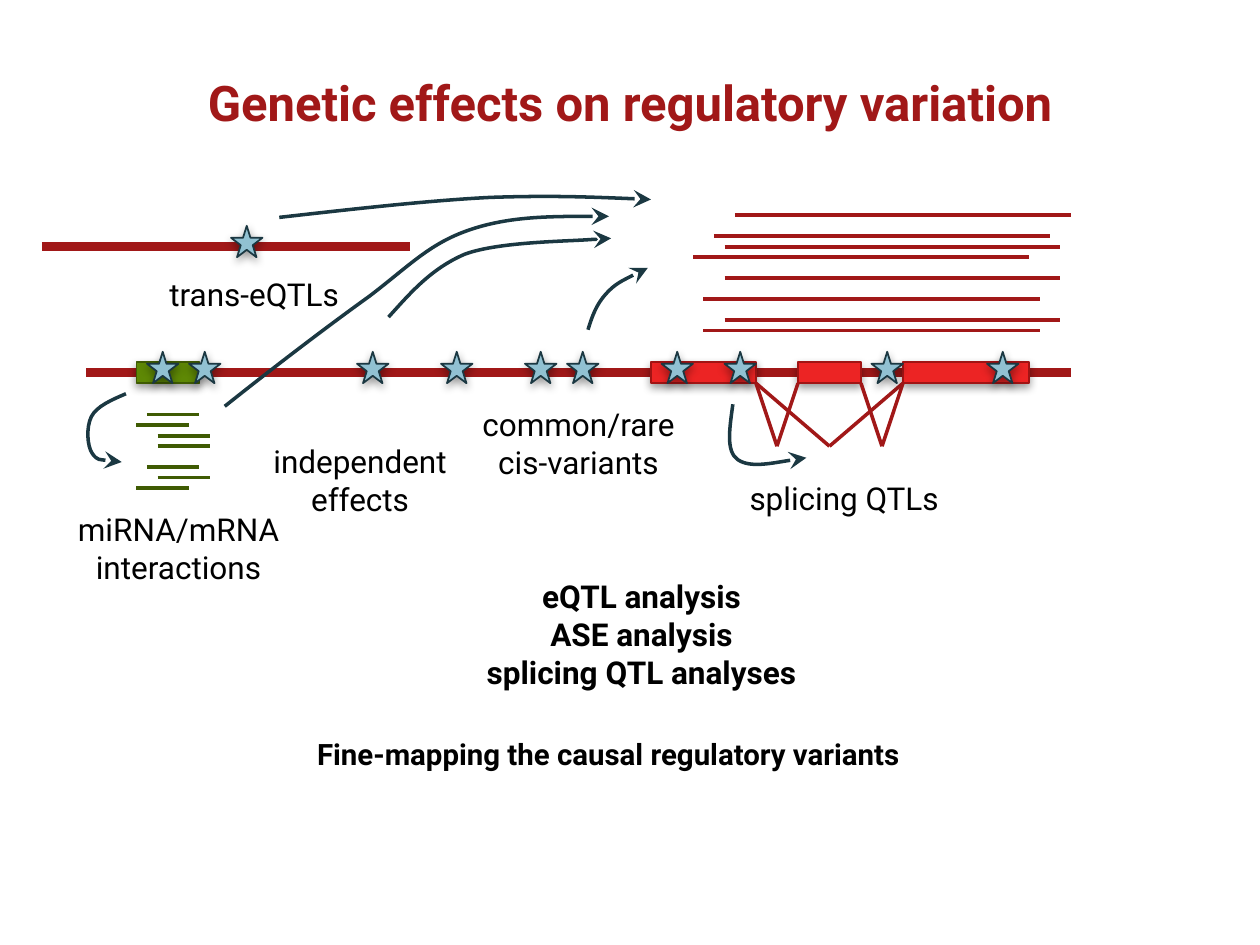
from lxml import etree
from pptx import Presentation
from pptx.dml.color import RGBColor
from pptx.enum.shapes import MSO_CONNECTOR, MSO_SHAPE
from pptx.enum.text import MSO_ANCHOR, MSO_AUTO_SIZE, PP_ALIGN
from pptx.oxml.ns import qn
from pptx.util import Inches, Pt

RECT, STAR = MSO_SHAPE.RECTANGLE, MSO_SHAPE.STAR_5_POINT
STRAIGHT = MSO_CONNECTOR.STRAIGHT
LEFT, MID = PP_ALIGN.LEFT, PP_ALIGN.CENTER
TOP, BASE = MSO_ANCHOR.TOP, MSO_ANCHOR.BOTTOM
FIXED = MSO_AUTO_SIZE.NONE
HEX = {
    "gene": "A11818", "exon": "EC2424", "edge": "A11414",
    "star": "91C1D2", "ink": "1B3842",
    "leaf": "5E8805", "moss": "3F5B03", "text": "000000",
}
RGB = {name: RGBColor.from_string(code) for name, code in HEX.items()}

deck = Presentation()
deck.slide_width, deck.slide_height = Inches(10), Inches(7.5)
CELL = deck.slide_width // 120
slide = deck.slides.add_slide(deck.slide_layouts[1])
shapes = slide.shapes


def draw_line(x1, y1, x2, y2, color, width=2):
    ends = [round(v * CELL) for v in (x1, y1, x2, y2)]
    line = shapes.add_connector(STRAIGHT, *ends)
    line.line.color.rgb = RGB[color]
    line.line.width = Pt(width)
    etree.SubElement(line._element.spPr, qn("a:effectLst"))


def draw_shape(kind, x, y, w, h, fill, edge):
    box = [round(v * CELL) for v in (x, y, w, h)]
    shape = shapes.add_shape(kind, *box)
    shape.fill.solid()
    shape.fill.fore_color.rgb = RGB[fill]
    shape.line.color.rgb = RGB[edge]
    shape.line.width = Pt(1)
    shape.shadow.inherit = False
    glow = etree.SubElement(
        shape._element.spPr.find(qn("a:effectLst")), qn("a:outerShdw"),
        blurRad=str(Pt(5)), dist=str(Pt(2)), dir="5400000", rotWithShape="0")
    tint = etree.SubElement(glow, qn("a:srgbClr"), val=HEX["text"])
    etree.SubElement(tint, qn("a:alpha"), val="40000")


draw_line(8.2, 35.5, 102, 35.5, "gene", 5)
draw_line(4, 23.5, 39, 23.5, "gene", 5)

for x, w in [(62, 10), (76, 6), (86, 12)]:
    draw_shape(RECT, x, 34.5, w, 2, "exon", "edge")
draw_shape(RECT, 13, 34.5, 6, 2, "leaf", "moss")

long_rows = [(70, 20.5), (68, 22.5), (69, 23.5), (66, 24.5),
             (69, 26.5), (67, 28.5), (69, 30.5), (67, 31.5)]
short_rows = [(14, 39.5), (13, 40.5), (15, 41.5), (15, 42.5),
              (14, 44.5), (15, 45.5), (13, 46.5)]
for rows, span, color in [(long_rows, 32, "gene"), (short_rows, 5, "moss")]:
    for x, y in rows:
        draw_line(x, y, x + span, y, color)

for left, tip, right in [(72, 74, 76), (82, 84, 86), (72, 79, 86)]:
    for x in (left, right):
        draw_line(x, 36.5, tip, 42.5, "gene")

for x in (14, 18, 34, 42, 50, 54, 63, 69, 83, 94):
    draw_shape(STAR, x, 33.5, 3, 3, "star", "ink")
draw_shape(STAR, 22, 21.5, 3, 3, "star", "ink")

curves = [
    [(37, 30.2), (39, 28), (41, 25.6), (44.3, 24.2), (47.6, 23),
     (54.2, 23), (56.5, 22.8), (57.1, 22.8), (57.6, 22.7), (58.2, 22.7)],
    [(56, 31.4), (56.4, 30.1), (56.8, 29), (57.7, 28),
     (58.6, 27), (60.1, 26.3), (61.7, 25.5)],
    [(69.8, 38.5), (69.5, 40.8), (69.1, 43), (70.3, 43.8),
     (71.5, 44.6), (76, 43.7), (76.8, 43.6)],
    [(26.6, 20.7), (33.7, 19.9), (40.8, 19.1), (46.7, 18.8),
     (52.6, 18.6), (57.2, 18.8), (62, 19)],
    [(12, 37.5), (10.6, 38.1), (9.2, 38.7), (8.7, 39.7), (8.2, 40.7),
     (8.3, 42.5), (8.8, 43.2), (9.3, 43.9), (10.5, 43.9), (11.6, 44)],
    [(21.4, 38.7), (26.3, 34.8), (31.3, 31), (35.2, 28.2), (39, 25.3),
     (40.9, 23.2), (44.7, 21.9), (48.5, 20.6), (53.3, 20.6), (58, 20.6)],
]
for curve in curves:
    spots = [(round(x * CELL), round(y * CELL)) for x, y in curve]
    pen = shapes.build_freeform(*spots[0])
    pen.add_line_segments(spots[1:], close=False)
    arrow = pen.convert_to_shape()
    arrow.fill.background()
    arrow.line.color.rgb = RGB["ink"]
    arrow.line.width = Pt(2)
    arrow.shadow.inherit = False
    steps = list(arrow._element.iter(qn("a:lnTo")))
    track = steps[0].getparent()
    for i in range(0, len(steps), 3):
        bend = etree.SubElement(track, qn("a:cubicBezTo"))
        for step in steps[i:i + 3]:
            bend.append(step[0])
            track.remove(step)
    etree.SubElement(arrow._element.spPr.find(qn("a:ln")), qn("a:tailEnd"),
                     type="stealth", w="lg", len="lg")

labels = [
    ("common/rare cis-variants", 43.3, 38, 23.6, 8.5, True, False),
    ("independent effects", 23.6, 41.5, 21.4, 8.5, True, False),
    ("trans-eQTLs", 14.4, 25.6, 19.6, 4.8, False, False),
    ("splicing QTLs", 69.7, 45, 21.4, 8.5, True, False),
    ("miRNA/mRNA interactions", 3, 48, 28, 8.5, True, False),
    ("eQTL analysis\nASE analysis\nsplicing QTL analyses",
     43.9, 54.4, 34.4, 12.1, False, True),
]
for text, x, y, w, h, wrap, bold in labels:
    box = shapes.add_textbox(*[round(v * CELL) for v in (x, y, w, h)])
    frame = box.text_frame
    frame.word_wrap = wrap
    frame.text = text
    for para in frame.paragraphs:
        para.alignment = MID
        font = para.runs[0].font
        font.name, font.size, font.bold = "Roboto", Pt(18), bold
        font.color.rgb = RGB["text"]

title, body = shapes.title, slide.placeholders[1]
heads = [
    (title, "Genetic effects on regulatory variation",
     (7.2, 1.5, 105.6, 11.6), BASE, MID, 28, "gene"),
    (body, "Fine-mapping the causal regulatory variants",
     (29, 69.5, 66.7, 10), TOP, LEFT, 16.8, "text"),
]
for holder, text, place, anchor, align, size, color in heads:
    holder.left, holder.top, holder.width, holder.height = [
        round(v * CELL) for v in place]
    frame = holder.text_frame
    frame.text = text
    frame.auto_size = FIXED
    frame.vertical_anchor = anchor
    para = frame.paragraphs[0]
    para.alignment = align
    para.space_before = Pt(0)
    font = para.runs[0].font
    font.name, font.size, font.bold = "Roboto", Pt(size), True
    font.color.rgb = RGB[color]

props = body.text_frame.paragraphs[0]._p.get_or_add_pPr()
props.set("marL", str(Inches(0.38)))
props.set("indent", str(Inches(-0.38)))
etree.SubElement(props, qn("a:buNone"))

deck.save("out.pptx")
